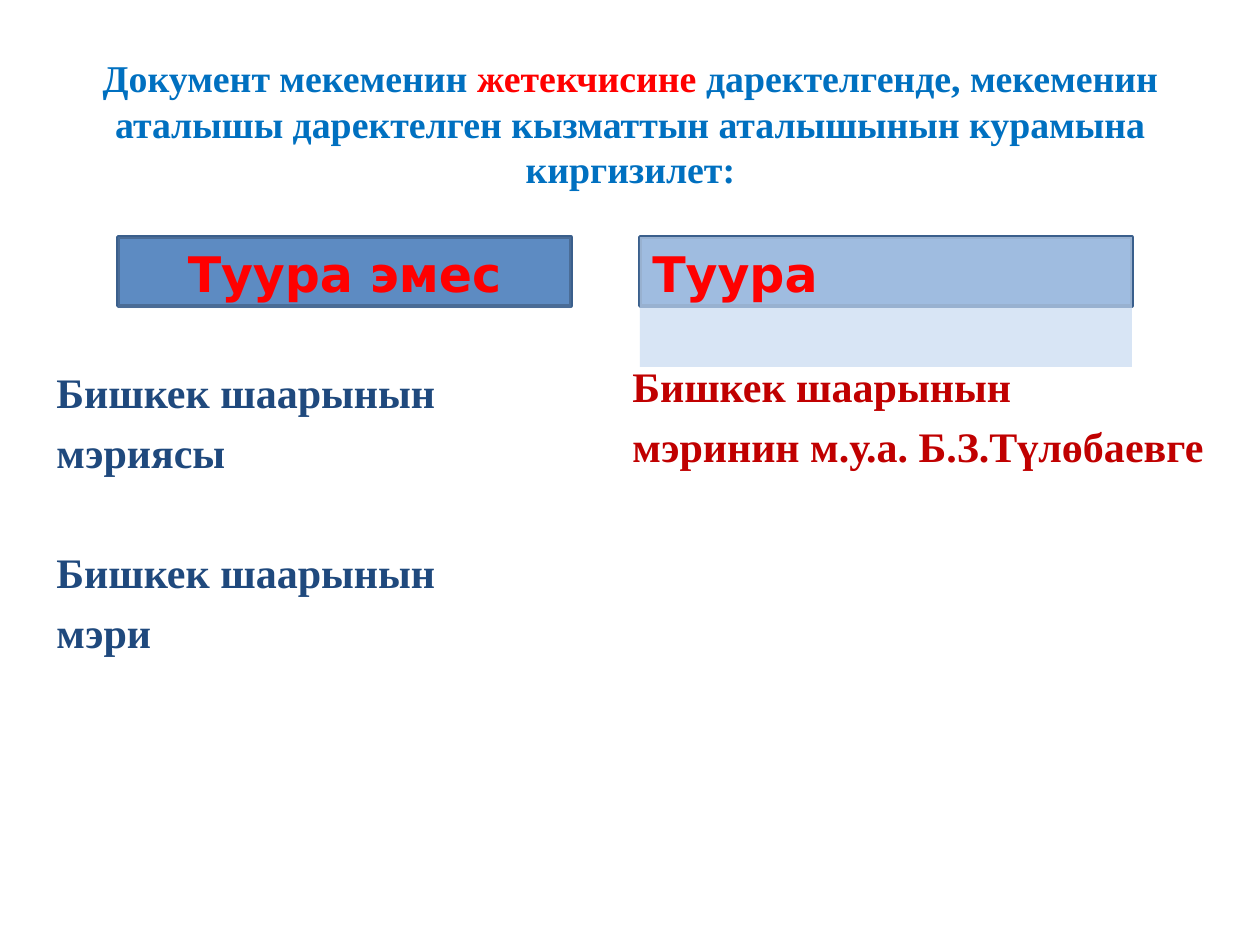
import dataclasses

import pptx
import pptx.dml.color
import pptx.enum.shapes
import pptx.enum.text
import pptx.oxml.ns
import pptx.util
from lxml import etree

PX = 7257  # EMU per pixel, 126 px to the inch
ALIGN = pptx.enum.text.PP_ALIGN
ANCHOR = pptx.enum.text.MSO_ANCHOR


@dataclasses.dataclass(frozen=True)
class Theme:
    serif: str = "Times New Roman"
    sans: str = "DejaVu Sans"
    title: str = "0070C0"
    accent: str = "FF0000"
    wrong: str = "1F497D"
    right: str = "C00000"
    bar: str = "4F81BD"
    bar_edge: str = "3A5F8C"
    wrong_tint: str = "DCE6F2"
    right_tint: str = "C6D9F1"
    title_size: float = 21.6
    title_leading: float = 26
    heading_size: float = 28
    body_size: float = 24
    body_gap: float = 5.9


def rgb(value):
    return pptx.dml.color.RGBColor.from_string(value)


class SlideBuilder:
    def __init__(self, slide, theme):
        self.slide = slide
        self.theme = theme

    def box(self, *px):
        return [pptx.util.Emu(length * PX) for length in px]

    def style(self, run, font, size, color):
        run.font.name = font
        run.font.size = pptx.util.Pt(size)
        run.font.bold = True
        run.font.color.rgb = rgb(color)

    def title(self, area, parts):
        heading = self.slide.shapes.title
        heading.left, heading.top, heading.width, heading.height = self.box(*area)
        frame = heading.text_frame
        frame.word_wrap = True
        frame.vertical_anchor = ANCHOR.MIDDLE
        paragraph = frame.paragraphs[0]
        paragraph.alignment = ALIGN.CENTER
        paragraph.line_spacing = pptx.util.Pt(self.theme.title_leading)
        for text, color in parts:
            run = paragraph.add_run()
            run.text = text
            self.style(run, self.theme.serif, self.theme.title_size, color)

    def rectangle(self, area, fill, edge=None, opacity=None):
        rect = self.slide.shapes.add_shape(
            pptx.enum.shapes.MSO_SHAPE.RECTANGLE, *self.box(*area))
        rect.shadow.inherit = False
        rect.fill.solid()
        rect.fill.fore_color.rgb = rgb(fill)
        if edge:
            rect.line.color.rgb = rgb(edge)
            rect.line.width = pptx.util.Pt(2)
        else:
            rect.line.fill.background()
        if opacity is not None:
            tag = pptx.oxml.ns.qn("a:srgbClr")
            color = next(rect.fill._xPr.iter(tag))
            alpha = etree.SubElement(color, pptx.oxml.ns.qn("a:alpha"))
            alpha.set("val", str(opacity * 1000))
        return rect

    def heading(self, area, text, tint, opacity, align):
        frame = self.rectangle(area, tint, opacity=opacity).text_frame
        frame.word_wrap = True
        frame.vertical_anchor = ANCHOR.TOP
        frame.text = text
        paragraph = frame.paragraphs[0]
        paragraph.alignment = align
        self.style(paragraph.runs[0], self.theme.sans,
                   self.theme.heading_size, self.theme.accent)

    def body(self, area, lines, color):
        """Each line is its text and the space before it in points."""
        frame = self.slide.shapes.add_textbox(*self.box(*area)).text_frame
        frame.word_wrap = True
        for index, (text, space) in enumerate(lines):
            paragraph = frame.add_paragraph() if index else frame.paragraphs[0]
            paragraph.text = text
            paragraph.space_before = pptx.util.Pt(space)
            self.style(paragraph.runs[0], self.theme.serif,
                       self.theme.body_size, color)


def main():
    theme = Theme()
    deck = pptx.Presentation()
    deck.slide_width = pptx.util.Inches(10)
    deck.slide_height = pptx.util.Inches(7.5)
    page = SlideBuilder(deck.slides.add_slide(deck.slide_layouts[5]), theme)

    # Bars behind the column headings
    wrong_x, wrong_width = 118, 453
    right_x, right_width = 640, 492
    bar_top, bar_height = 237, 69
    for x, width in ((right_x, right_width), (wrong_x, wrong_width)):
        page.rectangle((x, bar_top, width, bar_height), theme.bar, theme.bar_edge)

    # Title
    page.title((64, 38, 1133, 170), [
        ("Документ мекеменин ", theme.title),
        ("жетекчисине ", theme.accent),
        ("даректелгенде, мекеменин аталышы даректелген кызматтын "
         "аталышынын курамына киргизилет:", theme.title),
    ])

    # Wrong and right examples
    gap = theme.body_gap
    page.body((44, 360, 575, 585), [
        ("Бишкек шаарынын", 3.4),
        ("мэриясы", gap),
        ("Бишкек шаарынын", 39.4),
        ("мэри", gap),
    ], theme.wrong)
    page.body((620, 354, 605, 318), [
        ("Бишкек шаарынын", 41.5),
        ("мэринин м.у.а. Б.З.Түлөбаевге", gap),
    ], theme.right)

    # Column headings on translucent tints
    page.heading((wrong_x, bar_top, wrong_width, 72), "Туура эмес",
                 theme.wrong_tint, 10, ALIGN.CENTER)
    page.heading((right_x, bar_top, right_width, 130), "Туура",
                 theme.right_tint, 68, ALIGN.LEFT)

    deck.save("out.pptx")


if __name__ == "__main__":
    main()
